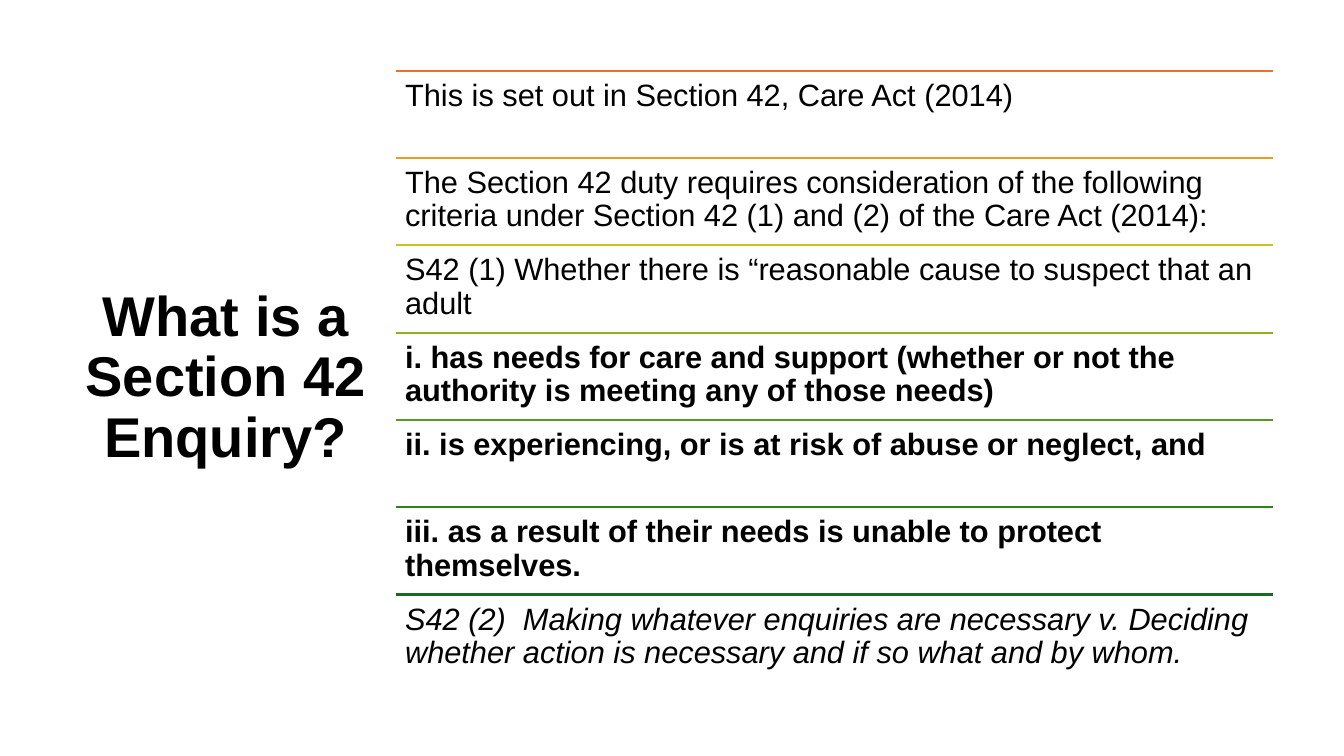
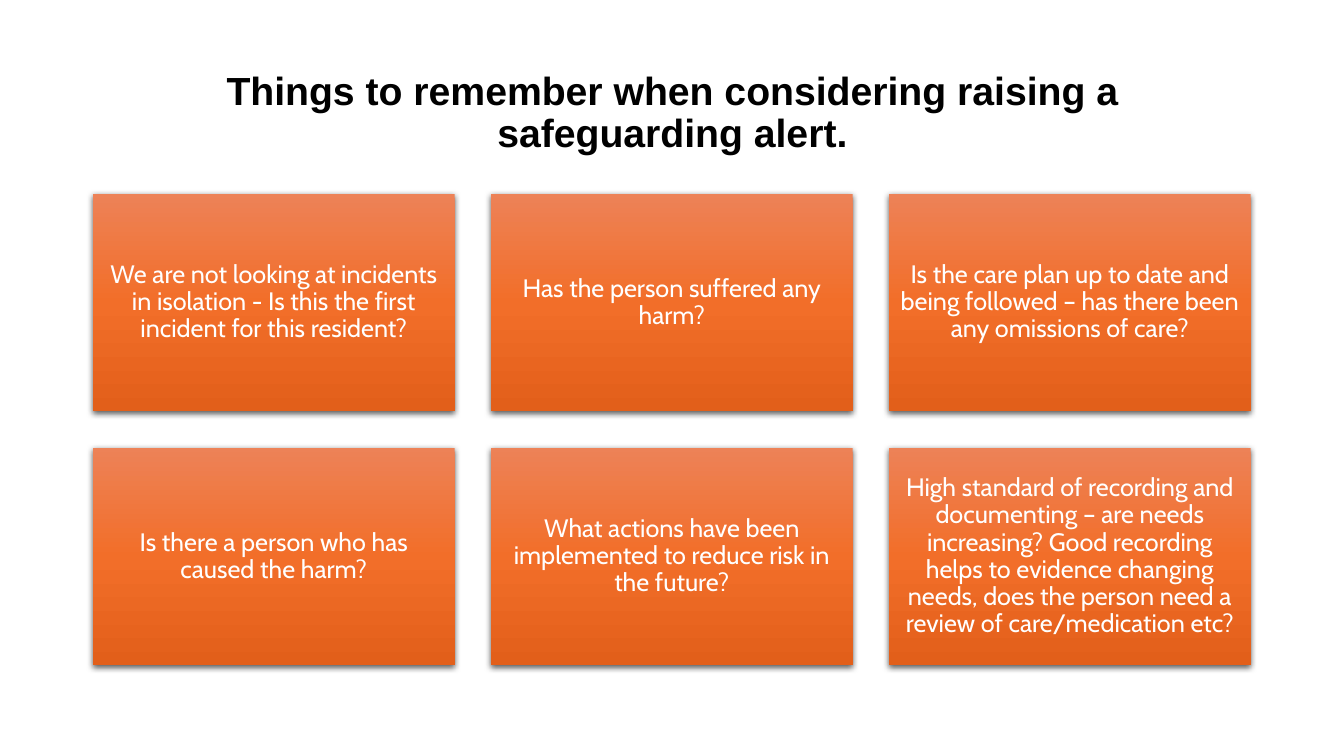
"""Build two slides on Section 42 enquiries and raising safeguarding alerts."""
from copy import deepcopy

from lxml import etree
from pptx import Presentation
from pptx import util as u
from pptx.dml.color import RGBColor
from pptx.enum import shapes, text
from pptx.oxml.ns import qn

ENQUIRY_TITLE = "What is a Section 42 Enquiry?"
ENQUIRY_ROWS = [
    ("E97132", "This is set out in Section 42, Care Act (2014)", {}),
    ("E39D1F", "The Section 42 duty requires consideration of the following criteria "
               "under Section 42 (1) and (2) of the Care Act (2014):", {}),
    ("CBC11E", "S42 (1) Whether there is “reasonable cause to suspect that an adult", {}),
    ("8EB21E", "i. has needs for care and support (whether or not the authority is "
               "meeting any of those needs)", {"bold": True}),
    ("56991D", "ii. is experiencing, or is at risk of abuse or neglect, and", {"bold": True}),
    ("2C821B", "iii. as a result of their needs is unable to protect themselves.", {"bold": True}),
    ("196B24", "S42 (2)  Making whatever enquiries are necessary v. Deciding whether "
               "action is necessary and if so what and by whom.", {"italic": True}),
]
REMINDER_TITLE = "Things to remember when considering raising a safeguarding alert."
REMINDER_CARDS = [
    "We are not looking at incidents in isolation - Is this the first incident for this resident?",
    "Has the person suffered any harm?",
    "Is the care plan up to date and being followed – has there been any omissions of care?",
    "Is there a person who has caused the harm?",
    "What actions have been implemented to reduce risk in the future?",
    "High standard of recording and documenting – are needs increasing? Good recording helps to "
    "evidence changing needs, does the person need a review of care/medication etc?",
]


class Theme:
    """Colours, type styles and line widths shared by the slides."""
    ink = RGBColor.from_string("000000")
    paper = RGBColor.from_string("FFFFFF")
    card_gradient = [(0, "ED8257"), (0.5, "F26E29"), (1, "E25F1A")]
    rule_width = u.Pt(1.5)
    line_spacing = 0.9
    title = {"name": "Arial", "bold": True}
    large_title = {**title, "size": u.Pt(40)}
    wide_title = {**title, "size": u.Pt(28)}
    row = {"name": "Arial", "size": u.Pt(22)}
    card = {"name": "Cabin", "size": u.Pt(18)}


def set_attributes(target, values):
    for name, value in values.items():
        setattr(target, name, value)


def write(shape, content, font, color, inset=None, centred=True):
    frame = shape.text_frame
    frame.word_wrap = True
    frame.vertical_anchor = text.MSO_ANCHOR.MIDDLE if centred else text.MSO_ANCHOR.TOP
    if inset is not None:
        sides = ("left", "top", "right", "bottom")
        set_attributes(frame, {f"margin_{side}": inset for side in sides})
    paragraph = frame.paragraphs[0]
    paragraph.alignment = text.PP_ALIGN.CENTER if centred else text.PP_ALIGN.LEFT
    paragraph.line_spacing = Theme.line_spacing
    run = paragraph.add_run()
    run.text = content
    set_attributes(run.font, font)
    run.font.color.rgb = color


def add_title(slide, content, box, font):
    write(slide.shapes.add_textbox(*map(u.Cm, box)), content, font, Theme.ink)


def add_rule(slide, left, top, width, color):
    rule = slide.shapes.add_connector(shapes.MSO_CONNECTOR.STRAIGHT, left, top, left + width, top)
    rule.line.color.rgb = RGBColor.from_string(color)
    rule.line.width = Theme.rule_width
    etree.SubElement(rule._element.spPr, qn("a:effectLst"))


def paint_card(shape):
    shape.line.fill.background()
    shape.fill.gradient()
    shape.fill.gradient_angle = 270
    properties = shape._element.spPr
    stop_list = properties.find(f".//{qn('a:gsLst')}")
    stop_list.append(deepcopy(stop_list[0]))
    for stop, (position, color) in zip(shape.fill.gradient_stops, Theme.card_gradient):
        stop.position = position
        stop.color.rgb = RGBColor.from_string(color)
    shape.shadow.inherit = False
    shadow = etree.SubElement(
        properties.find(qn("a:effectLst")), qn("a:outerShdw"),
        blurRad=str(u.Pt(4.5)), dist=str(u.Pt(1.5)), dir="5400000", algn="ctr", rotWithShape="0")
    shade = etree.SubElement(shadow, qn("a:srgbClr"), val=str(Theme.ink))
    etree.SubElement(shade, qn("a:alpha"), val="63000")


def build_enquiry(slide):
    add_title(slide, ENQUIRY_TITLE, (1.75, 1.78, 7.87, 15.52), Theme.large_title)
    left, first_top, width, height = map(u.Cm, (9.98, 1.78, 22.1, 2.2))
    for index, (color, content, emphasis) in enumerate(ENQUIRY_ROWS):
        top = first_top + index * height
        add_rule(slide, left, top, width, color)
        row = slide.shapes.add_textbox(left, top, width, height)
        write(row, content, {**Theme.row, **emphasis}, Theme.ink, u.Cm(0.23), centred=False)


def build_reminders(slide):
    add_title(slide, REMINDER_TITLE, (2.34, 1.02, 29.21, 3.68), Theme.wide_title)
    columns = 3
    left, top, width, height, gap = map(u.Cm, (2.34, 4.88, 9.12, 5.49, 0.91))
    for index, content in enumerate(REMINDER_CARDS):
        row, column = divmod(index, columns)
        card = slide.shapes.add_shape(
            shapes.MSO_SHAPE.RECTANGLE,
            left + column * (width + gap), top + row * (height + gap), width, height)
        paint_card(card)
        write(card, content, Theme.card, Theme.paper, u.Cm(0.18))


def main():
    presentation = Presentation()
    presentation.slide_width = u.Cm(33.87)
    presentation.slide_height = u.Cm(19.05)
    for build in (build_enquiry, build_reminders):
        build(presentation.slides.add_slide(presentation.slide_layouts[6]))
    presentation.save("out.pptx")


if __name__ == "__main__":
    main()
